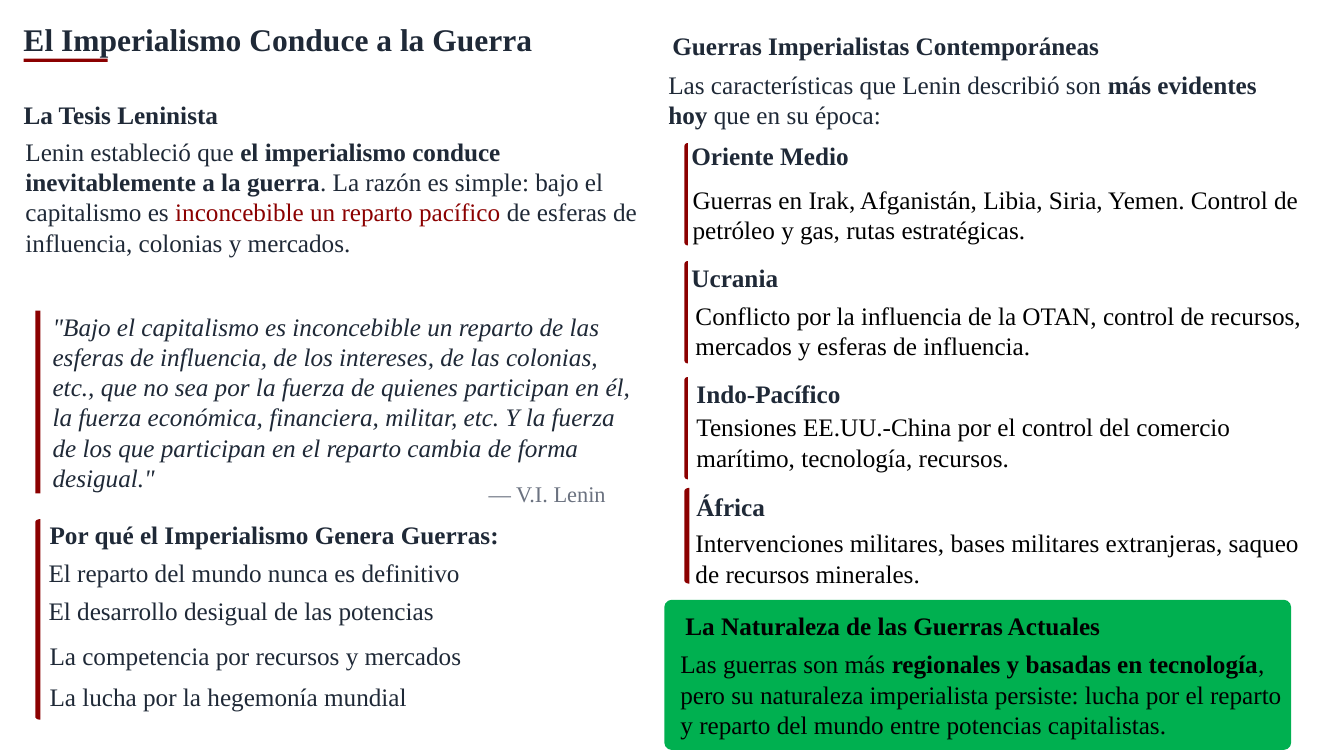
import math
from collections import namedtuple

from pptx import Presentation
from pptx import util as u
from pptx.dml import color
from pptx.enum import shapes, text

COLORS = {
    "ink": "1F2937",
    "black": "000000",
    "red": "8B0000",
    "gray": "6B7280",
    "green": "00B050",
}
FONT = "Times New Roman"
Box = namedtuple("Box", "left top width height")


def inside(box, left, top, width, height):
    return Box(box.left + left, box.top + top, width, height)


def paint(shape, name):
    shape.shadow.inherit = False
    shape.fill.solid()
    shape.fill.fore_color.rgb = color.RGBColor.from_string(COLORS[name])
    shape.line.fill.background()


def add_text(slide, box, runs, size=18, name="ink", bold=False, italic=False,
             spacing=1.0, align=text.PP_ALIGN.LEFT):
    shape = slide.shapes.add_textbox(*(u.Pt(value) for value in box))
    frame = shape.text_frame
    frame.word_wrap = True
    frame.vertical_anchor = text.MSO_ANCHOR.MIDDLE
    frame.margin_left = frame.margin_right = 0
    frame.margin_top = frame.margin_bottom = 0
    paragraph = frame.paragraphs[0]
    paragraph.alignment = align
    paragraph.line_spacing = spacing
    for words, style in [(runs, {})] if isinstance(runs, str) else runs:
        run = paragraph.add_run()
        run.text = words
        run.font.name = FONT
        run.font.size = u.Pt(size)
        run.font.bold = style.get("bold", bold)
        run.font.italic = italic
        run.font.color.rgb = color.RGBColor.from_string(COLORS[style.get("name", name)])


def add_heading(slide, box, words, name="ink", spacing=1.3):
    add_text(slide, box, words, name=name, bold=True, spacing=spacing)


def add_bar(slide, box):
    bar = slide.shapes.add_shape(
        shapes.MSO_SHAPE.RECTANGLE, *(u.Pt(value) for value in box))
    paint(bar, "red")


def add_rounded_bar(slide, box, radius=2.2, steps=6):
    right, bottom = box.left + box.width, box.top + box.height
    angles = [math.pi / 2 * step / steps for step in range(steps + 1)]
    curve = [(right - box.width * math.sin(angle), radius * (1 - math.cos(angle)))
             for angle in angles]
    points = [(x, box.top + drop) for x, drop in curve]
    points += [(x, bottom - drop) for x, drop in reversed(curve)]
    points = [(u.Pt(x), u.Pt(y)) for x, y in points]
    builder = slide.shapes.build_freeform(*points[0], scale=1.0)
    builder.add_line_segments(points[1:], close=True)
    paint(builder.convert_to_shape(), "red")


def add_title(slide, box):
    add_text(slide, inside(box, 0, 0, box.width, 25.2),
             "El Imperialismo Conduce a la Guerra", size=22.5, bold=True, spacing=0.9)
    add_bar(slide, inside(box, 0, 25.2, 60, 2.4))


def add_thesis(slide, box):
    add_heading(slide, inside(box, 0, 0, box.width, 20.2), "La Tesis Leninista", spacing=1.1)
    add_text(slide, inside(box, 1.4, 29.5, 452.2, 80.6), [
        ("Lenin estableció que ", {}),
        ("el imperialismo conduce inevitablemente a la guerra", {"bold": True}),
        (". La razón es simple: bajo el capitalismo es ", {}),
        ("inconcebible un reparto pacífico ", {"name": "red"}),
        ("de esferas de influencia, colonias y mercados.", {}),
    ])


def add_quote(slide, box):
    add_bar(slide, inside(box, 0, 2.2, 3.6, 130.6))
    add_text(
        slide, inside(box, 12.4, 0, 419.8, 134.6),
        "\"Bajo el capitalismo es inconcebible un reparto de las esferas de influencia, "
        "de los intereses, de las colonias, etc., que no sea por la fuerza de quienes "
        "participan en él, la fuerza económica, financiera, militar, etc. Y la fuerza de "
        "los que participan en el reparto cambia de forma desigual.\"", italic=True)
    add_text(slide, inside(box, -11.5, 125.3, 419, 12.2), "— V.I. Lenin", size=16,
             name="gray", spacing=1.2, align=text.PP_ALIGN.RIGHT)


def add_causes(slide, box):
    add_rounded_bar(slide, inside(box, 0, 0, 3.6, box.height))
    add_heading(slide, inside(box, 10.2, 0, 430, 15.1),
                "Por qué el Imperialismo Genera Guerras:")
    causes = [
        ("El reparto del mundo nunca es definitivo", 9.5, 30.2, 15.1, 1.0),
        ("El desarrollo desigual de las potencias", 9.5, 54, 23, 1.0),
        ("La competencia por recursos y mercados", 10.2, 84.2, 19.4, 1.3),
        ("La lucha por la hegemonía mundial", 10.2, 113, 20.2, 1.3),
    ]
    for words, left, top, height, spacing in causes:
        add_text(slide, inside(box, left, top, 371, height), words, spacing=spacing)


def add_introduction(slide, box):
    add_heading(slide, inside(box, 2.9, 0, 455, 20.2),
                "Guerras Imperialistas Contemporáneas", spacing=1.1)
    add_text(slide, inside(box, 0, 28.8, 452.2, 42.5), [
        ("Las características que Lenin describió son ", {}),
        ("más evidentes hoy", {"bold": True}),
        (" que en su época:", {}),
    ])


def add_war(slide, box, heading, heading_at, body, body_at):
    add_rounded_bar(slide, box)
    add_heading(slide, inside(box, *heading_at, 434.9, 15.1), heading)
    add_text(slide, inside(box, *body_at, 434.2, 48.2), body, name="black")


def add_conclusion(slide, box):
    panel = slide.shapes.add_shape(
        shapes.MSO_SHAPE.ROUNDED_RECTANGLE, *(u.Pt(value) for value in box))
    panel.adjustments[0] = 0.05
    paint(panel, "green")
    add_heading(slide, inside(box, 15.1, 7.2, 432.7, 15.1),
                "La Naturaleza de las Guerras Actuales", name="black")
    add_text(slide, inside(box, 11.5, 28.8, 432.7, 77), [
        ("Las guerras son más ", {}),
        ("regionales y basadas en tecnología", {"bold": True}),
        (", pero su naturaleza imperialista persiste: lucha por el reparto y reparto "
         "del mundo entre potencias capitalistas.", {}),
    ], name="black")


def add_wars(slide, left):
    wars = [
        (102.2, 2.4, 73.1, "Oriente Medio", (5, -2.1),
         "Guerras en Irak, Afganistán, Libia, Siria, Yemen. Control de petróleo y gas, "
         "rutas estratégicas.", (5.8, 27.1)),
        (186.5, 2.4, 73.1, "Ucrania", (5, 0.7),
         "Conflicto por la influencia de la OTAN, control de recursos, mercados y esferas "
         "de influencia.", (7.9, 25.6)),
        (269.3, 2.4, 73.1, "Indo-Pacífico", (8.6, 0.7),
         "Tensiones EE.UU.-China por el control del comercio marítimo, tecnología, "
         "recursos.", (8.6, 22.3)),
        (348.5, 3.6, 68.4, "África", (8.6, 2.1),
         "Intervenciones militares, bases militares extranjeras, saqueo de recursos "
         "minerales.", (7.9, 25.9)),
    ]
    for top, width, height, *content in wars:
        add_war(slide, Box(left, top, width, height), *content)


def main():
    presentation = Presentation()
    presentation.slide_width = u.Pt(960)
    presentation.slide_height = u.Pt(540)
    slide = presentation.slides.add_slide(presentation.slide_layouts[6])
    add_title(slide, Box(16.8, 16.6, 921.6, 27.6))
    add_thesis(slide, Box(16.8, 70.6, 455, 110))
    add_quote(slide, Box(25.2, 219.6, 432, 137.5))
    add_causes(slide, Box(25.2, 370.8, 440, 143.3))
    add_introduction(slide, Box(477.4, 20.9, 458, 71.3))
    add_wars(slide, 488.9)
    add_conclusion(slide, Box(474.5, 428.4, 447.8, 107.3))
    presentation.save("out.pptx")


if __name__ == "__main__":
    main()
